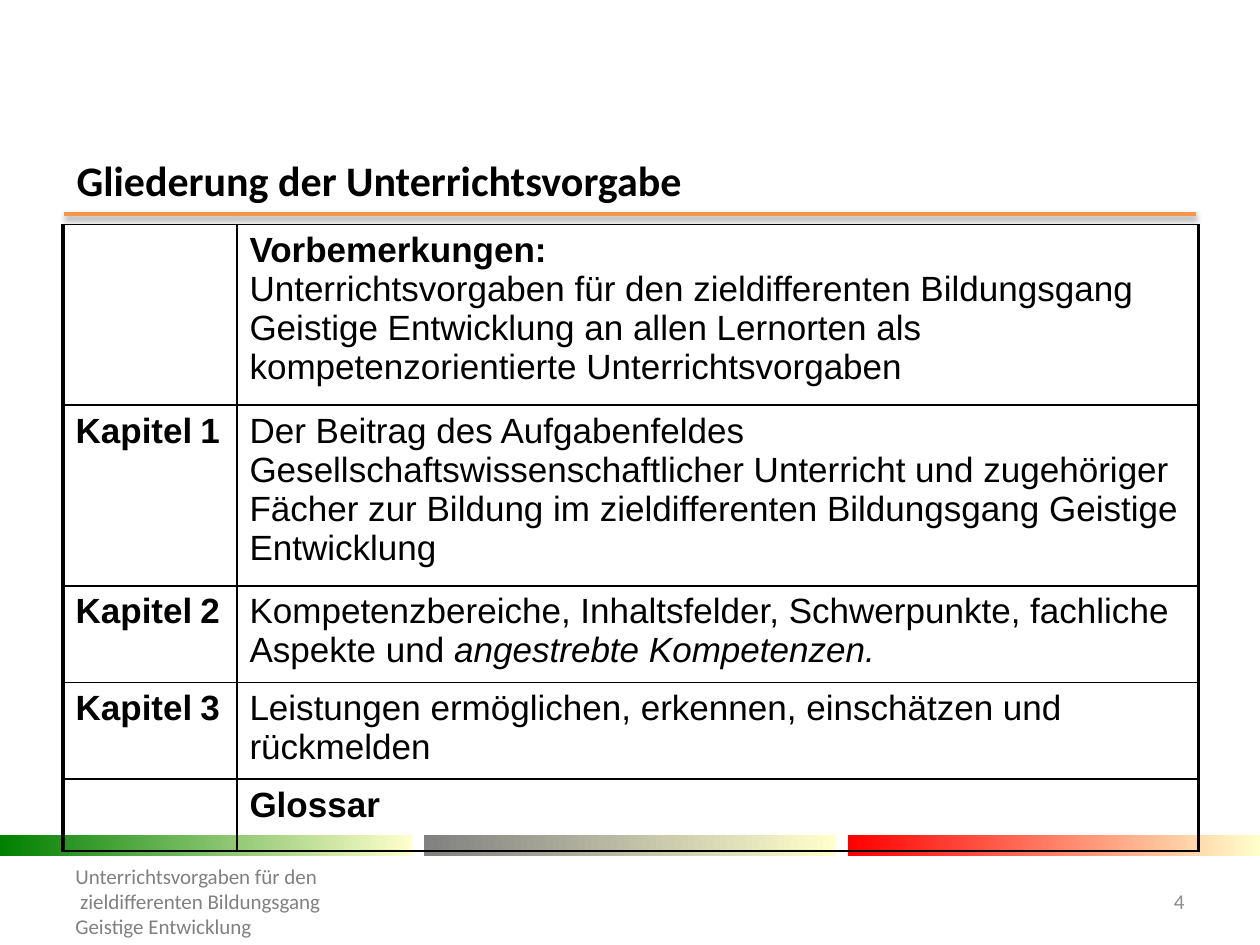
from lxml import etree
from pptx import Presentation
from pptx.dml.color import RGBColor
from pptx.enum.shapes import MSO_CONNECTOR as CONN, MSO_SHAPE as SHAPE
from pptx.enum.text import MSO_ANCHOR as ANCHOR, PP_ALIGN as ALIGN
from pptx.oxml import parse_xml
from pptx.oxml.ns import nsdecls, qn
from pptx.util import Pt

BLACK = RGBColor(0x00, 0x00, 0x00)
GRAY = RGBColor(0x80, 0x80, 0x80)
LIGHT_GRAY = RGBColor(0x8C, 0x8C, 0x8C)
GREEN = RGBColor(0x00, 0x80, 0x00)
RED = RGBColor(0xFF, 0x00, 0x00)
CREAM = RGBColor(0xFF, 0xFF, 0xCC)
ORANGE = RGBColor(0xF7, 0x96, 0x46)

WIDTH, HEIGHT = 720, 540
BREAK = "\n"


def add_text(p, text, font="Calibri", size=12, color=BLACK, bold=False, italic=False):
    """Add one formatted run to a paragraph."""
    r = p.add_run()
    r.text = text
    f = r.font
    f.name, f.size, f.bold, f.italic = font, Pt(size), bold, italic
    f.color.rgb = color


class SlideBuilder:
    head_font, body_font = "Calibri", "Arial"

    def __init__(self, slide):
        self.s = slide

    def text(self, x, y, w, h, lines, align=ALIGN.LEFT, **fmt):
        tf = self.s.shapes.add_textbox(Pt(x), Pt(y), Pt(w), Pt(h)).text_frame
        tf.word_wrap = True
        tf.vertical_anchor = ANCHOR.MIDDLE
        for i, line in enumerate(lines):
            p = tf.add_paragraph() if i else tf.paragraphs[0]
            p.alignment = align
            add_text(p, line, font=self.head_font, **fmt)

    def rule(self, x1, x2, y, color, width):
        line = self.s.shapes.add_connector(CONN.STRAIGHT, Pt(x1), Pt(y), Pt(x2), Pt(y))
        line.line.color.rgb = color
        line.line.width = Pt(width)
        line._element.spPr.append(parse_xml(
            f'<a:effectLst {nsdecls("a")}><a:outerShdw blurRad="{Pt(3.1)}" dist="{Pt(1.6)}" '
            'dir="5400000" rotWithShape="0"><a:srgbClr val="000000"><a:alpha val="38000"/>'
            '</a:srgbClr></a:outerShdw></a:effectLst>'))

    def gradient_bar(self, x, y, w, h, start, end):
        sp = self.s.shapes.add_shape(SHAPE.RECTANGLE, Pt(x), Pt(y), Pt(w), Pt(h))
        sp.shadow.inherit = False
        sp.line.fill.background()
        sp.fill.gradient()
        sp.fill.gradient_angle = 0
        for stop, color, pos in zip(sp.fill.gradient_stops, (start, end), (0, 1)):
            stop.color.rgb = color
            stop.position = pos

    def borders(self, cell, left, right, top=1, bottom=1):
        tcPr = cell._tc.get_or_add_tcPr()
        sides = {"lnL": left, "lnR": right, "lnT": top, "lnB": bottom}
        for i, (side, width) in enumerate(sides.items()):
            ln = etree.Element(qn(f"a:{side}"), w=str(Pt(width)))
            fill = etree.SubElement(ln, qn("a:solidFill"))
            etree.SubElement(fill, qn("a:srgbClr"), val=str(BLACK))
            tcPr.insert(i, ln)

    def table(self, x, y, widths, heights, rows):
        frame = self.s.shapes.add_table(len(rows), len(widths), Pt(x), Pt(y),
                                        Pt(sum(widths)), Pt(sum(heights)))
        tbl = frame.table
        tbl.first_row = tbl.horz_banding = False
        for col, w in zip(tbl.columns, widths):
            col.width = Pt(w)
        for row, h, contents in zip(tbl.rows, heights, rows):
            row.height = Pt(h)
            for c, (cell, runs) in enumerate(zip(row.cells, contents)):
                cell.fill.background()
                self.borders(cell, left=1 if c else 2.25, right=2.25 if c else 1)
                p = cell.text_frame.paragraphs[0]
                for text, fmt in runs:
                    if text == BREAK:
                        p.add_line_break()
                    else:
                        add_text(p, text, **{"font": self.body_font, "size": 20, **fmt})


def chapter(number):
    bold = {"bold": True}
    return [("Kapitel", bold), (" ", {"size": 16, **bold}), (str(number), bold)]


OUTLINE = [
    ([], [("Vorbemerkungen: ", {"bold": True}), (BREAK, {}),
          ("Unterrichtsvorgaben für den zieldifferenten Bildungsgang Geistige Entwicklung "
           "an allen Lernorten als kompetenzorientierte Unterrichtsvorgaben", {})]),
    (chapter(1), [("Der Beitrag des Aufgabenfeldes Gesellschaftswissenschaftlicher Unterricht "
                   "und zugehöriger Fächer zur Bildung im zieldifferenten Bildungsgang "
                   "Geistige Entwicklung", {})]),
    (chapter(2), [("Kompetenzbereiche, Inhaltsfelder, Schwerpunkte, fachliche Aspekte und ", {}),
                  ("angestrebte Kompetenzen.", {"italic": True})]),
    (chapter(3), [("Leistungen ermöglichen, erkennen, einschätzen und rückmelden", {})]),
    ([], [("Glossar", {"bold": True})]),
]


def main():
    prs = Presentation()
    prs.slide_width, prs.slide_height = Pt(WIDTH), Pt(HEIGHT)
    b = SlideBuilder(prs.slides.add_slide(prs.slide_layouts[6]))

    # Rule under the title and colour bars above the footer
    b.rule(36.7, 683.3, 122.4, ORANGE, 2)
    bar_w = 235.4
    step = (WIDTH - bar_w) / 2
    for i, color in enumerate((GREEN, GRAY, RED)):
        b.gradient_bar(i * step, 477.4, bar_w, 11.5, color, CREAM)

    # Title
    b.text(36.7, 88.6, 648, 28, ["Gliederung der Unterrichtsvorgabe"], size=24, bold=True)

    # Footer and page number
    b.text(36, 500.4, 414.7, 28.8, ["Unterrichtsvorgaben für den",
                                    " zieldifferenten Bildungsgang",
                                    "Geistige Entwicklung"], color=GRAY)
    b.text(638, 500.4, 46, 28.8, ["4"], align=ALIGN.RIGHT, color=LIGHT_GRAY)

    # Outline table
    b.table(36, 128.2, (99.4, 549.4), (99.2, 99.2, 53.3, 53.3, 41), OUTLINE)

    prs.save("out.pptx")


if __name__ == "__main__":
    main()
